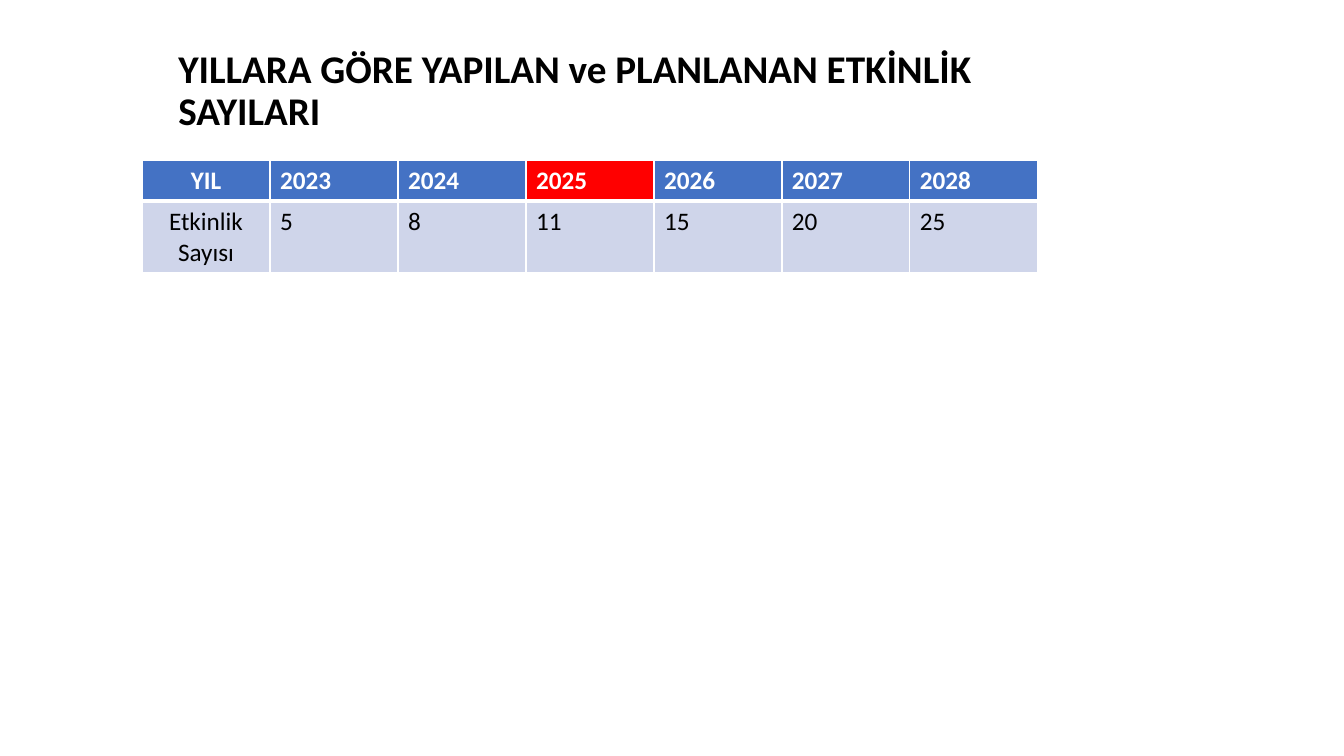
import pptx
import pptx.dml.color
import pptx.enum.text
import pptx.oxml
import pptx.oxml.ns
import pptx.util
from pptx.util import Cm

COLORS = {
    "text": "000000",
    "white": "FFFFFF",
    "header": "4472C4",
    "current": "FF0000",
    "body": "CFD5EA",
}
ALIGN = pptx.enum.text.PP_ALIGN
TITLE = "YILLARA GÖRE YAPILAN ve PLANLANAN ETKİNLİK SAYILARI"
CURRENT_YEAR = "2025"
ROWS = [
    ["YIL", "2023", "2024", "2025", "2026", "2027", "2028"],
    ["Etkinlik Sayısı", "5", "8", "11", "15", "20", "25"],
]
ROW_HEIGHTS = [1.03, 1.78]
COL_WIDTH = 3.225


def rgb(name):
    return pptx.dml.color.RGBColor.from_string(COLORS[name])


def set_attrs(obj, values):
    for name, value in values.items():
        setattr(obj, name, value)


def write_text(tf, text, size, bold, color, **paragraph_format):
    p = tf.paragraphs[0]
    set_attrs(p, paragraph_format)
    r = p.add_run()
    r.text = text
    set_attrs(r.font, {"name": "Calibri", "size": pptx.util.Pt(size), "bold": bold})
    r.font.color.rgb = rgb(color)


def add_border(cell, side, width):
    tc_pr = cell._tc.get_or_add_tcPr()
    tc_pr.append(pptx.oxml.parse_xml(
        f'<a:ln{side} {pptx.oxml.ns.nsdecls("a")} w="{pptx.util.Pt(width)}">'
        f'<a:solidFill><a:srgbClr val="{COLORS["white"]}"/></a:solidFill></a:ln{side}>'
    ))


def fill_cell(cell, text, is_header, is_label):
    widths = {"L": 1, "R": 1, "T": 1 if is_header else 3, "B": 3 if is_header else 1}
    for side, width in widths.items():
        add_border(cell, side, width)
    fill = "header" if is_header else "body"
    if text == CURRENT_YEAR:
        fill = "current"
    cell.fill.solid()
    cell.fill.fore_color.rgb = rgb(fill)
    write_text(cell.text_frame, text, 18, is_header,
               "white" if is_header else "text",
               alignment=ALIGN.CENTER if is_label else ALIGN.LEFT)


def add_title(s):
    sp = s.shapes.title
    set_attrs(sp, {"left": Cm(4.24), "top": Cm(1.02),
                   "width": Cm(22.94), "height": Cm(2.59)})
    set_attrs(sp.text_frame, {
        "word_wrap": True,
        "auto_size": pptx.enum.text.MSO_AUTO_SIZE.NONE,
        "vertical_anchor": pptx.enum.text.MSO_ANCHOR.MIDDLE,
    })
    write_text(sp.text_frame, TITLE, 28, True, "text",
               alignment=ALIGN.LEFT, line_spacing=0.9)


def add_event_table(s):
    columns = len(ROWS[0])
    table = s.shapes.add_table(
        len(ROWS), columns, Cm(3.58), Cm(4.04),
        Cm(COL_WIDTH * columns), Cm(sum(ROW_HEIGHTS))).table
    for column in table.columns:
        column.width = Cm(COL_WIDTH)
    for i, (values, height) in enumerate(zip(ROWS, ROW_HEIGHTS)):
        table.rows[i].height = Cm(height)
        for j, text in enumerate(values):
            fill_cell(table.cell(i, j), text, i == 0, j == 0)


def main():
    prs = pptx.Presentation()
    set_attrs(prs, {"slide_width": Cm(33.87), "slide_height": Cm(19.05)})
    s = prs.slides.add_slide(prs.slide_layouts[5])
    add_title(s)
    add_event_table(s)
    prs.save("out.pptx")


if __name__ == "__main__":
    main()
